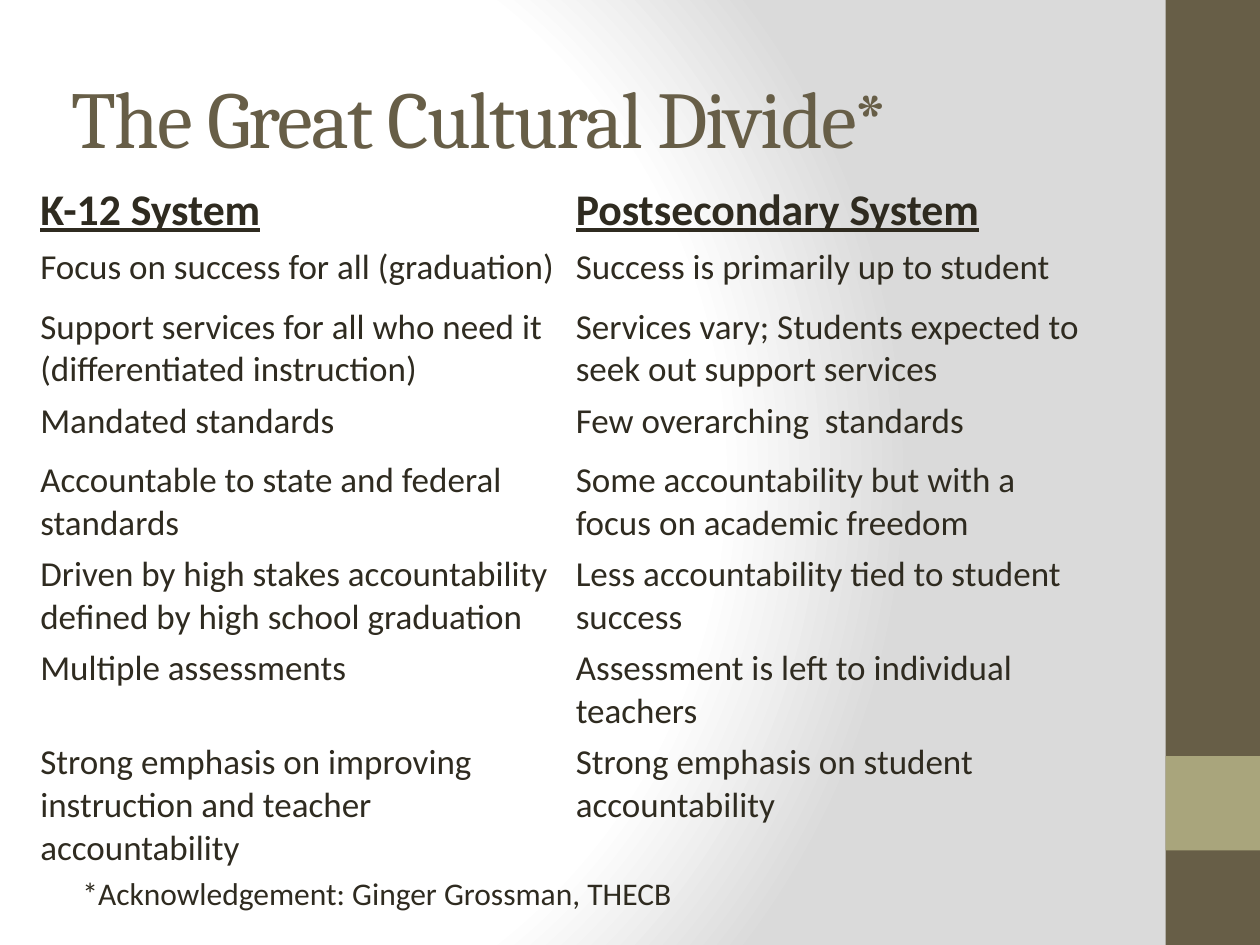
from dataclasses import dataclass

from pptx import Presentation
from pptx.dml.color import RGBColor as RGB
from pptx.enum.shapes import MSO_SHAPE as SHAPE
from pptx.enum.text import MSO_ANCHOR as ANCHOR
from pptx.oxml import parse_xml
from pptx.oxml.ns import nsdecls, qn
from pptx.util import Inches, Pt


@dataclass(frozen=True)
class Theme:
    brown: RGB = RGB.from_string("675E47")
    olive: RGB = RGB.from_string("A9A57C")
    ink: RGB = RGB.from_string("2F2B20")
    heading_font: str = "Cambria"
    body_font: str = "Calibri"
    title: Pt = Pt(46)
    header: Pt = Pt(25)
    body: Pt = Pt(20)
    note: Pt = Pt(18)
    stops: tuple = ((0, "FFFFFF"), (75, "FFFFFF"), (100, "DADADA"))


THEME = Theme()
NO_STYLE = "{2D5ABB26-0587-4C30-8999-92F81FD0307C}"

ROWS = [
    (0.49, "K-12 System", "Postsecondary System"),
    (0.47, "Focus on success for all (graduation)",
     "Success is primarily up to student"),
    (0.73, "Support services for all who need it (differentiated instruction)",
     "Services vary; Students expected to seek out support services"),
    (0.47, "Mandated standards", "Few overarching  standards"),
    (0.67, "Accountable to state and federal standards",
     "Some accountability but with a focus on academic freedom"),
    (0.67, "Driven by high stakes accountability  defined by high school graduation",
     "Less accountability tied to student success"),
    (0.65, "Multiple assessments", "Assessment is left to individual teachers"),
    (0.94, "Strong emphasis on improving instruction and teacher accountability",
     "Strong emphasis on student accountability"),
]


def set_background(s):
    s.background.fill.gradient()
    stops = "".join(
        f'<a:gs pos="{pos * 1000}"><a:srgbClr val="{color}"/></a:gs>'
        for pos, color in THEME.stops)
    grad = parse_xml(
        f'<a:gradFill {nsdecls("a")} rotWithShape="1"><a:gsLst>{stops}</a:gsLst>'
        '<a:path path="circle"><a:fillToRect l="20000" t="50000" '
        'r="100000" b="50000"/></a:path></a:gradFill>')
    bg = s._element.find(".//" + qn("p:bgPr"))
    bg.replace(bg.find(qn("a:gradFill")), grad)


def add_block(s, top, height, color):
    block = s.shapes.add_shape(SHAPE.RECTANGLE, Inches(9.25), Inches(top),
                               Inches(0.75), Inches(height))
    block.shadow.inherit = False
    block.fill.solid()
    block.fill.fore_color.rgb = color
    block.line.fill.background()


def set_text(tf, text, font, size, color):
    p = tf.paragraphs[0]
    p.text = text
    p.font.name = font
    p.font.size = size
    p.font.color.rgb = color
    return p


def set_insets(target):
    target.margin_left = target.margin_right = Inches(0.07)
    target.margin_top = target.margin_bottom = Inches(0.04)


def add_text(s, left, top, width, height):
    tf = s.shapes.add_textbox(Inches(left), Inches(top),
                              Inches(width), Inches(height)).text_frame
    tf.word_wrap = True
    return tf


def add_title(s, text):
    tf = add_text(s, 0.5, 0.3, 8.33, 1.25)
    tf.vertical_anchor = ANCHOR.MIDDLE
    set_insets(tf)
    p = set_text(tf, text, THEME.heading_font, THEME.title, THEME.brown)
    p.runs[0].font._element.set("spc", "-100")


def add_comparison(s, rows):
    height = sum(row[0] for row in rows)
    table = s.shapes.add_table(len(rows), 2, Inches(0.25), Inches(1.42),
                               Inches(8.5), Inches(height)).table
    table.first_row = table.horz_banding = False
    table._tbl.tblPr.find(qn("a:tableStyleId")).text = NO_STYLE
    for i, (row_height, *texts) in enumerate(rows):
        table.rows[i].height = Inches(row_height)
        header = i == 0
        for j, text in enumerate(texts):
            cell = table.cell(i, j)
            cell.fill.background()
            set_insets(cell)
            cell.vertical_anchor = ANCHOR.MIDDLE if header else ANCHOR.TOP
            p = set_text(cell.text_frame, text, THEME.body_font,
                         THEME.header if header else THEME.body, THEME.ink)
            p.font.bold = p.font.underline = header


def main():
    prs = Presentation()
    prs.slide_width, prs.slide_height = Inches(10), Inches(7.5)
    s = prs.slides.add_slide(prs.slide_layouts[6])
    set_background(s)
    add_block(s, 0, 7.5, THEME.brown)
    add_block(s, 6, 0.75, THEME.olive)
    add_title(s, "The Great Cultural Divide*")
    add_comparison(s, ROWS)
    set_text(add_text(s, 0.5, 6.89, 6.67, 0.4),
             " *Acknowledgement: Ginger Grossman, THECB",
             THEME.body_font, THEME.note, THEME.ink)
    prs.save("out.pptx")


if __name__ == "__main__":
    main()
